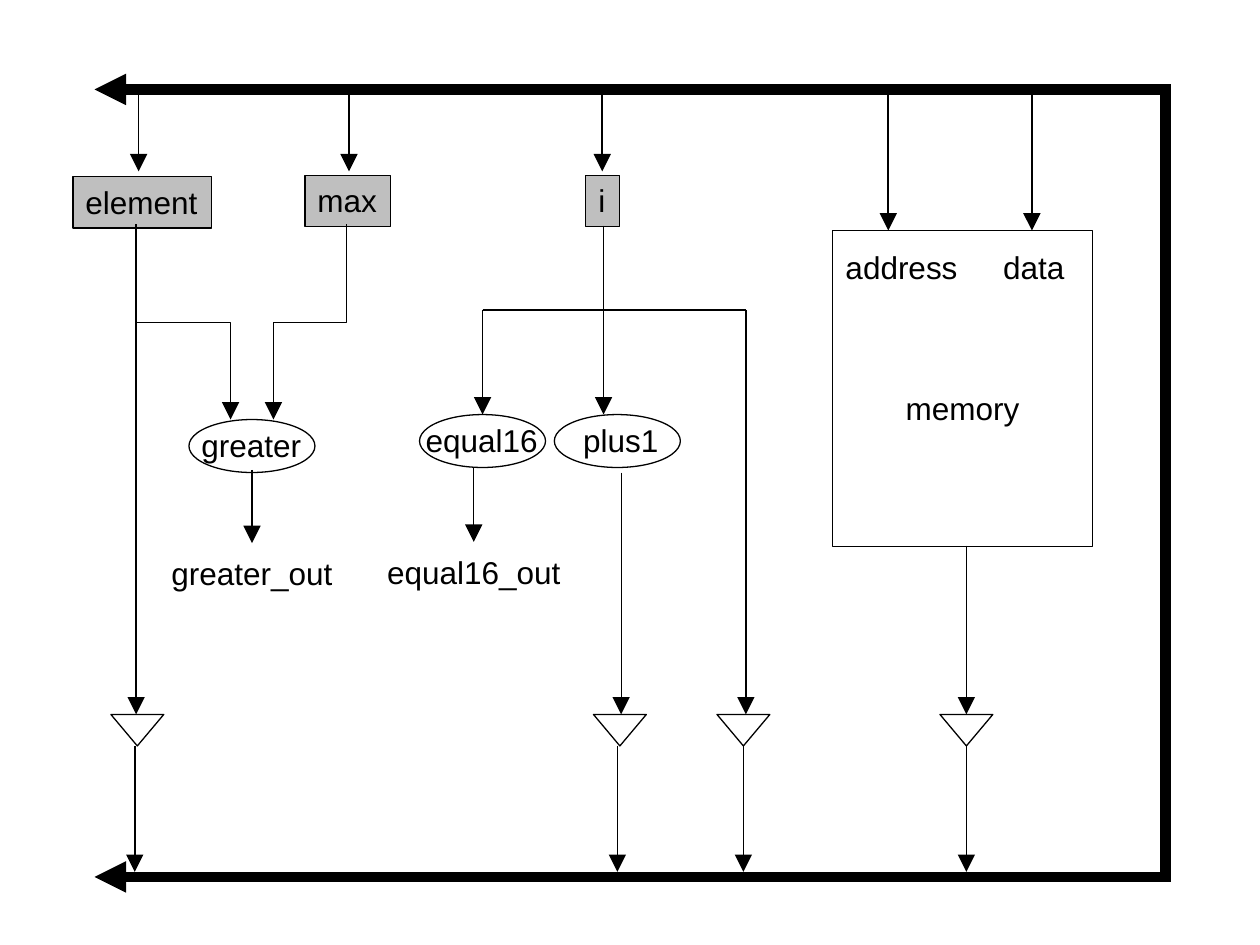
from pptx import Presentation
from pptx import util as u
from pptx.dml.color import RGBColor
from pptx.enum import shapes, text
from pptx.oxml.ns import qn
from lxml import etree

BLACK = RGBColor(0x00, 0x00, 0x00)
REGISTER_GREY = RGBColor(0xBF, 0xBF, 0xBF)
THIN, MEDIUM, BUS = 0.75, 1, 6


class Diagram:
    font, size = "Arial", 18

    def __init__(self, slide):
        self.shapes = slide.shapes

    def stroke(self, item, weight, head=None):
        """Draw the outline in black; head is the arrowhead size, med or lg."""
        item.line.color.rgb = BLACK
        item.line.width = u.Pt(weight)
        if head:
            etree.SubElement(item.line._get_or_add_ln(), qn("a:tailEnd"),
                             type="triangle", w=head, len=head)

    def line(self, x1, y1, x2, y2, weight=THIN, head=None):
        wire = self.shapes.add_connector(
            shapes.MSO_CONNECTOR.STRAIGHT, *map(u.Inches, (x1, y1, x2, y2)))
        self.stroke(wire, weight, head)
        etree.SubElement(wire._element.spPr, qn("a:effectLst"))

    def down_arrow(self, x, top, bottom, weight=THIN):
        self.line(x, top, x, bottom, weight, "lg")

    def elbow_arrow(self, *points):
        start, *rest = [tuple(map(u.Inches, point)) for point in points]
        builder = self.shapes.build_freeform(*start)
        builder.add_line_segments(rest, close=False)
        wire = builder.convert_to_shape()
        wire.shadow.inherit = False
        wire.fill.background()
        self.stroke(wire, THIN, "lg")

    def block(self, kind, x, y, width, height, fill=None):
        outline = self.shapes.add_shape(kind, *map(u.Inches, (x, y, width, height)))
        outline.shadow.inherit = False
        if fill is None:
            outline.fill.background()
        else:
            outline.fill.solid()
            outline.fill.fore_color.rgb = fill
        self.stroke(outline, THIN)
        return outline

    def add_words(self, holder, words, align, anchor=text.MSO_ANCHOR.TOP):
        frame = holder.text_frame
        frame.word_wrap = False
        frame.vertical_anchor = anchor
        paragraph = frame.paragraphs[0]
        paragraph.alignment = align
        run = paragraph.add_run()
        run.text = words
        run.font.name = self.font
        run.font.size = u.Pt(self.size)
        run.font.color.rgb = BLACK

    def label(self, words, x, y, width, align=text.PP_ALIGN.CENTER):
        holder = self.shapes.add_textbox(*map(u.Inches, (x, y, width, 0.4)))
        self.add_words(holder, words, align)

    def register(self, words, x, y, width):
        box = self.block(shapes.MSO_SHAPE.RECTANGLE, x, y, width, 0.41, REGISTER_GREY)
        self.add_words(box, words, text.PP_ALIGN.LEFT)

    def operator(self, words, x, y, label_x, label_width):
        self.block(shapes.MSO_SHAPE.OVAL, x, y, 1, 0.42)
        self.label(words, label_x, y, label_width, text.PP_ALIGN.LEFT)


def main():
    deck = Presentation()
    deck.slide_width, deck.slide_height = u.Inches(10), u.Inches(7.5)
    diagram = Diagram(deck.slides.add_slide(deck.slide_layouts[6]))

    # Bus around the datapath
    top_bus, bottom_bus, bus_right = 0.71, 6.96, 9.25
    diagram.line(bus_right, 0.67, bus_right, 7, BUS)
    for y in (bottom_bus, top_bus):
        diagram.line(bus_right, y, 0.75, y, BUS, "med")

    # Registers and the wires that load them
    for words, x, y, width, wire_x in (("element", 0.58, 1.4, 1.1, 1.1),
                                       ("max", 2.42, 1.39, 0.68, 2.77),
                                       ("i", 4.65, 1.39, 0.27, 4.78)):
        diagram.register(words, x, y, width)
        diagram.down_arrow(wire_x, top_bus, 1.36, MEDIUM)

    # Comparison of element and max
    for source_x, target_x in ((1.08, 1.83), (2.75, 2.17)):
        diagram.elbow_arrow((source_x, 1.78), (source_x, 2.56),
                            (target_x, 2.56), (target_x, 3.33))
    diagram.down_arrow(2, 3.73, 4.31)
    diagram.label("greater_out", 1.26, 4.35, 1.48)

    # Memory
    memory = diagram.block(shapes.MSO_SHAPE.RECTANGLE, 6.61, 1.83, 2.06, 2.51)
    memory.text_frame.margin_top = u.Inches(0.36)
    diagram.add_words(memory, "memory", text.PP_ALIGN.CENTER, text.MSO_ANCHOR.MIDDLE)
    for words, x, width, wire_x in (("address", 6.61, 1.09, 7.05),
                                    ("data", 7.86, 0.69, 8.19)):
        diagram.label(words, x, 1.92, width)
        diagram.down_arrow(wire_x, top_bus, 1.83, MEDIUM)

    # Fan-out of i
    fork_y, buffer_y = 2.46, 5.67
    diagram.line(4.79, 1.79, 4.79, fork_y)
    diagram.line(3.83, fork_y, 5.92, fork_y)
    for x, bottom in ((3.83, 3.29), (4.79, 3.29), (5.92, buffer_y)):
        diagram.down_arrow(x, fork_y, bottom)
    diagram.down_arrow(3.76, 3.71, 4.3)
    diagram.label("equal16_out", 2.97, 4.34, 1.58)

    # Buffers that drive the bottom bus
    for buffer_x, output_x in ((0.88, 1.07), (4.71, 4.9), (5.69, 5.9), (7.46, 7.67)):
        diagram.block(shapes.MSO_SHAPE.FLOWCHART_MERGE, buffer_x, buffer_y, 0.42, 0.25)
        diagram.down_arrow(output_x, 5.92, 6.92, MEDIUM)
    for x, top, weight in ((1.08, 2.53, MEDIUM), (4.93, 3.75, THIN), (7.67, 4.33, MEDIUM)):
        diagram.down_arrow(x, top, buffer_y, weight)

    # Operators
    diagram.operator("greater", 1.5, 3.33, 1.5, 1)
    diagram.operator("equal16", 3.33, 3.29, 3.28, 1.1)
    diagram.operator("plus1", 4.4, 3.29, 4.53, 0.81)

    deck.save("out.pptx")


if __name__ == "__main__":
    main()
